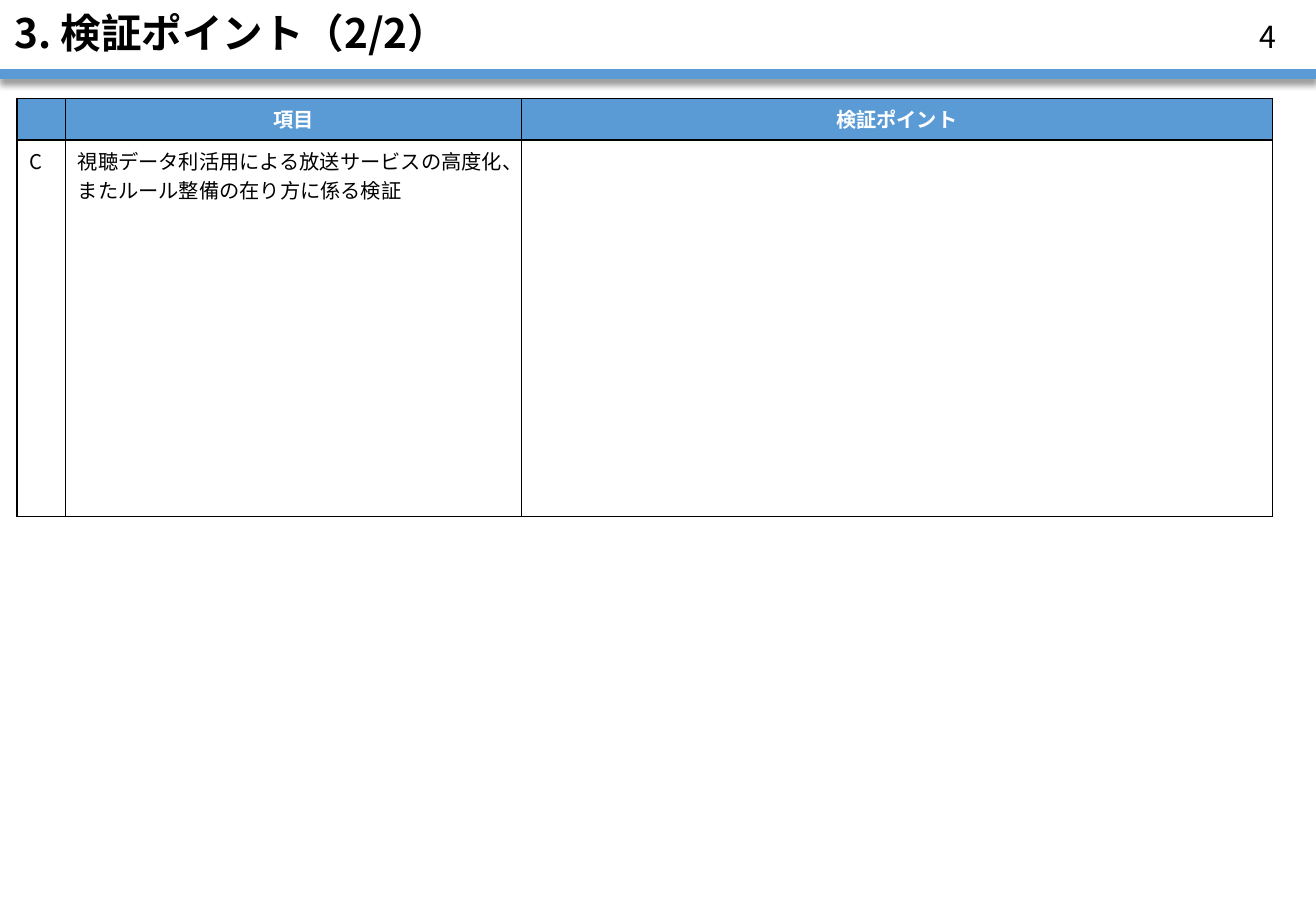
from lxml import etree
from pptx import Presentation
from pptx.dml.color import RGBColor
from pptx.enum.shapes import MSO_CONNECTOR, MSO_SHAPE
from pptx.enum.text import MSO_ANCHOR, MSO_AUTO_SIZE, PP_ALIGN
from pptx.oxml import parse_xml
from pptx.oxml.ns import nsdecls, qn
from pptx.util import Inches, Pt

BLACK = RGBColor(0x00, 0x00, 0x00)
WHITE = RGBColor(0xFF, 0xFF, 0xFF)
BLUE = RGBColor(0x5B, 0x9B, 0xD5)
FONT = "Noto Sans CJK JP"
STRAIGHT = MSO_CONNECTOR.STRAIGHT
RECTANGLE = MSO_SHAPE.RECTANGLE
MIDDLE = MSO_ANCHOR.MIDDLE
LEFT, CENTER = PP_ALIGN.LEFT, PP_ALIGN.CENTER
NO_AUTOFIT = MSO_AUTO_SIZE.NONE

SLIDE_W, SLIDE_H = 10.83, 7.5
COLUMNS = [0.4, 3.75, 6.18]
ROWS = [0.34, 3.1]
CELLS = [
    ["", "項目", "検証ポイント"],
    ["C", "視聴データ利活用による放送サービスの高度化、またルール整備の在り方に係る検証", ""],
]


def set_text(tf, text, size, color=BLACK, bold=False, align=LEFT):
    tf.text = text
    p = tf.paragraphs[0]
    p.alignment = align
    for r in p.runs:
        r.font.size = Pt(size)
        r.font.bold = bold
        r.font.color.rgb = color
        r.font.name = FONT
        ea = etree.SubElement(r.font._element, qn("a:ea"))
        ea.set("typeface", FONT)
    if not text:
        end = etree.SubElement(p._p, qn("a:endParaRPr"))
        end.set("sz", str(size * 100))
    return p


def set_margins(tf, x, y):
    tf.margin_left = tf.margin_right = Inches(x)
    tf.margin_top = tf.margin_bottom = Inches(y)


def add_header(slide, x, y, w, h):
    line_y = Inches(y + h + 0.02)
    line = slide.shapes.add_connector(
        STRAIGHT, Inches(x), line_y, Inches(x + w), line_y)
    line.line.color.rgb = BLUE
    line.line.width = Pt(6)
    line._element.spPr.append(parse_xml(
        f'<a:effectLst {nsdecls("a")}>'
        f'<a:outerShdw blurRad="{Pt(4)}" dist="{Pt(3)}" dir="5400000" rotWithShape="0">'
        '<a:srgbClr val="000000"><a:alpha val="40000"/></a:srgbClr>'
        '</a:outerShdw></a:effectLst>'))

    title = slide.shapes.title
    title.left, title.top = Inches(x), Inches(y)
    title.width, title.height = Inches(w), Inches(h)
    tf = title.text_frame
    tf.auto_size = NO_AUTOFIT
    tf.vertical_anchor = MIDDLE
    set_margins(tf, 0.12, 0.04)
    set_text(tf, "3. 検証ポイント（2/2）", 24, bold=True).line_spacing = 0.9

    number = slide.shapes.add_shape(
        RECTANGLE, Inches(x + w - 0.59), Inches(y + 0.14), Inches(0.39), Inches(0.31))
    number.shadow.inherit = False
    number.fill.solid()
    number.fill.fore_color.rgb = WHITE
    number.line.fill.background()
    tf = number.text_frame
    tf.vertical_anchor = MIDDLE
    set_margins(tf, 0, 0.05)
    set_text(tf, "4", 18, align=CENTER)


def add_borders(cell):
    tcPr = cell._tc.get_or_add_tcPr()
    for side in ("lnL", "lnR", "lnT", "lnB"):
        tcPr.append(parse_xml(
            f'<a:{side} {nsdecls("a")} w="{Pt(1)}"><a:solidFill>'
            f'<a:srgbClr val="{BLACK}"/></a:solidFill></a:{side}>'))


def add_points_table(slide, x, y):
    frame = slide.shapes.add_table(
        len(ROWS), len(COLUMNS), Inches(x), Inches(y),
        Inches(sum(COLUMNS)), Inches(sum(ROWS)))
    table = frame.table
    table.horz_banding = False
    for column, width in zip(table.columns, COLUMNS):
        column.width = Inches(width)
    for i, height in enumerate(ROWS):
        table.rows[i].height = Inches(height)
        for j, text in enumerate(CELLS[i]):
            cell = table.cell(i, j)
            add_borders(cell)
            if i == 0:
                cell.fill.solid()
                cell.fill.fore_color.rgb = BLUE
                set_text(cell.text_frame, text, 12, WHITE, True, CENTER)
            else:
                cell.fill.background()
                set_text(cell.text_frame, text, 12)


def main():
    prs = Presentation()
    prs.slide_width, prs.slide_height = Inches(SLIDE_W), Inches(SLIDE_H)
    slide = prs.slides.add_slide(prs.slide_layouts[5])
    add_header(slide, 0, 0, SLIDE_W, 0.59)
    add_points_table(slide, 0.14, 0.81)
    prs.save("out.pptx")


if __name__ == "__main__":
    main()
